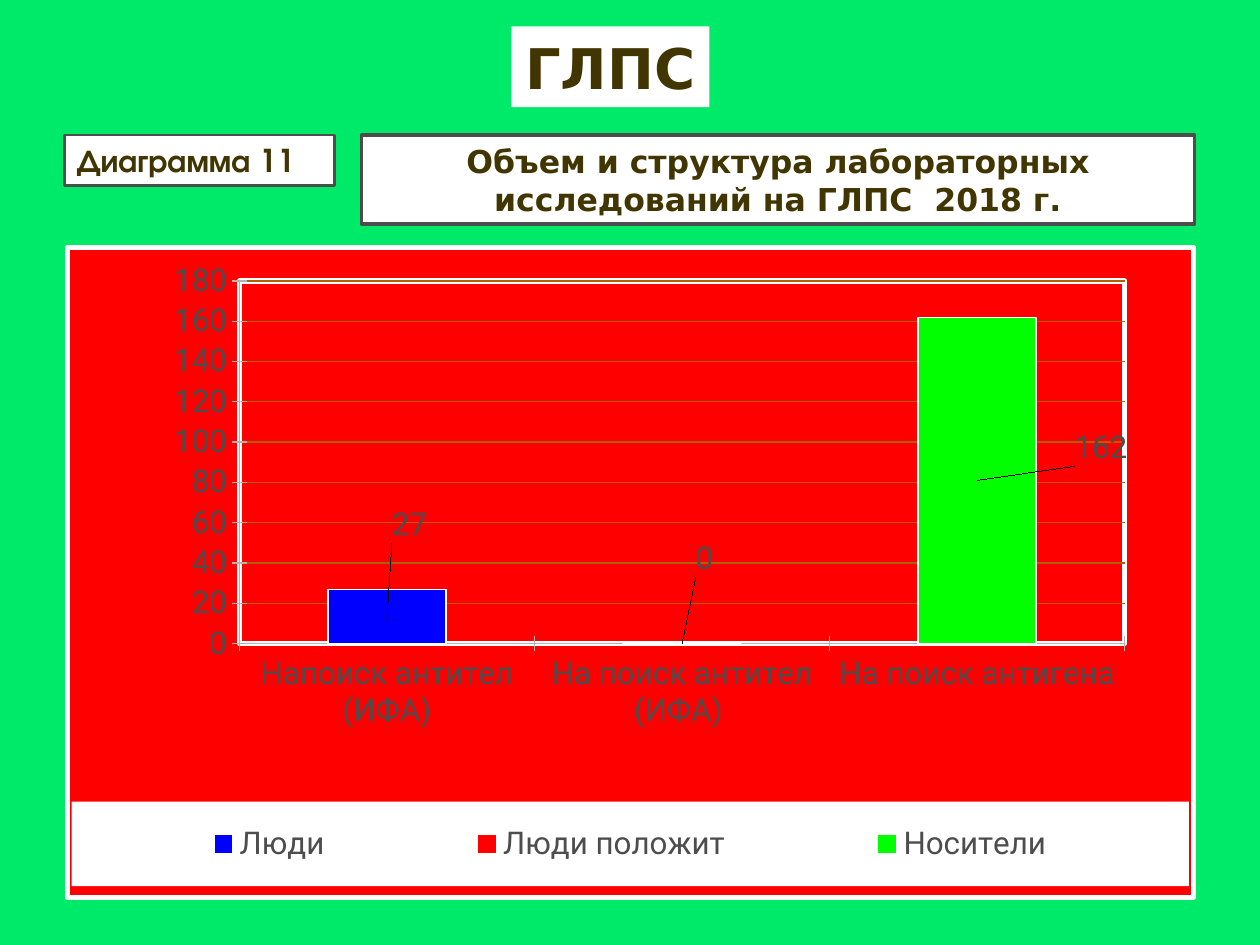
from pptx import Presentation
from pptx.chart.data import CategoryChartData as ChartData
from pptx.dml.color import RGBColor
from pptx.enum.chart import XL_CHART_TYPE as Kind, XL_LEGEND_POSITION as Side
from pptx.enum.chart import XL_TICK_MARK as Tick
from pptx.enum.shapes import MSO_SHAPE as Form
from pptx.enum.text import MSO_ANCHOR as Anchor, PP_ALIGN as Align
from pptx.oxml import parse_xml
from pptx.oxml.ns import nsdecls
from pptx.util import Cm, Pt

GREEN = RGBColor(0x00, 0xEA, 0x6A)
WHITE = RGBColor(0xFF, 0xFF, 0xFF)
BLACK = RGBColor(0x00, 0x00, 0x00)
BROWN = RGBColor(0x41, 0x35, 0x01)
GRAY = RGBColor(0x4D, 0x4D, 0x4D)
SILVER = RGBColor(0xB3, 0xB3, 0xB3)
RED = RGBColor(0xFF, 0x00, 0x00)
BLUE = RGBColor(0x00, 0x00, 0xFF)
LIME = RGBColor(0x01, 0xFF, 0x01)
OCHRE = RGBColor(0xB2, 0x5E, 0x07)


def frame(fill, line, width):
    """Fill and outline for a chart part."""
    inside = f'<a:solidFill><a:srgbClr val="{fill}"/></a:solidFill>' if fill else "<a:noFill/>"
    edge = (f'<a:ln w="{Pt(width)}"><a:solidFill><a:srgbClr val="{line}"/></a:solidFill></a:ln>'
            if line else "<a:ln><a:noFill/></a:ln>")
    return parse_xml(f'<c:spPr {nsdecls("c", "a")}>{inside}{edge}</c:spPr>')


def layout(x, y, w=None, h=None):
    """Manual place: a shift alone, or a full box when a size is given."""
    parts = [("x", x), ("y", y)]
    modes = ""
    if w:
        modes = '<c:xMode val="edge"/><c:yMode val="edge"/>'
        parts += [("w", w), ("h", h)]
    body = "".join(f'<c:{key} val="{val}"/>' for key, val in parts)
    return parse_xml(f'<c:layout {nsdecls("c")}><c:manualLayout>'
                     f'{modes}{body}</c:manualLayout></c:layout>')


class Deck:
    size = Pt(18)
    face = "DejaVu Sans"

    def __init__(self):
        self.prs = Presentation()
        self.prs.slide_width, self.prs.slide_height = Cm(25.4), Cm(19.05)
        self.slide = self.prs.slides.add_slide(self.prs.slide_layouts[5])
        back = self.slide.background.fill
        back.solid()
        back.fore_color.rgb = GREEN

    def label(self, shape, text, size, face, align, wrap=True):
        shape.fill.solid()
        shape.fill.fore_color.rgb = WHITE
        box = shape.text_frame
        box.text = text
        box.word_wrap = wrap
        box.vertical_anchor = Anchor.MIDDLE
        para = box.paragraphs[0]
        para.alignment = align
        font = para.runs[0].font
        font.size, font.name, font.bold = size, face, True
        font.color.rgb = BROWN

    def title(self, text, x, y, w, h):
        shape = self.slide.shapes.title
        shape.left, shape.top, shape.width, shape.height = map(Cm, (x, y, w, h))
        self.label(shape, text, Pt(32), self.face, Align.CENTER, wrap=False)

    def box(self, text, x, y, w, h, edge, face=face, align=Align.CENTER):
        shape = self.slide.shapes.add_shape(Form.RECTANGLE, *map(Cm, (x, y, w, h)))
        shape.shadow.inherit = False
        shape.line.color.rgb = GRAY
        shape.line.width = Pt(edge)
        self.label(shape, text, self.size, face, align)

    def chart(self, cats, rows, x, y, w, h):
        data = ChartData()
        data.categories = cats
        for spot, (name, value, *_) in enumerate(rows):
            data.add_series(name, [value if i == spot else None for i in range(len(cats))])
        chart = self.slide.shapes.add_chart(
            Kind.COLUMN_STACKED, *map(Cm, (x, y, w, h)), data).chart
        chart.has_title = False
        chart.font.size, chart.font.name = self.size, "Roboto"
        chart.font.color.rgb = GRAY
        root = chart._chartSpace
        root.chart.addnext(frame(RED, WHITE, 3))

        # Plot area
        area = root.chart.plotArea
        for old in area.xpath("c:layout"):
            area.remove(old)
        inner = layout(0.153, 0.052, 0.786, 0.558)
        inner[0].insert(0, parse_xml(f'<c:layoutTarget {nsdecls("c")} val="inner"/>'))
        area.insert(0, inner)
        area.append(frame(None, WHITE, 3))

        # Axes
        for axis in (chart.category_axis, chart.value_axis):
            axis.major_tick_mark = Tick.CROSS
            axis.format.line.color.rgb = SILVER
        axis = chart.value_axis
        axis.minimum_scale, axis.maximum_scale, axis.major_unit = 0, 180, 20
        grid = axis.major_gridlines.format.line
        grid.color.rgb, grid.width = OCHRE, Pt(0.75)

        # Columns and their labels
        plot = chart.plots[0]
        plot.gap_width, plot.overlap, plot.vary_by_categories = 150, 100, False
        for spot, (ser, row) in enumerate(zip(plot.series, rows)):
            _, _, color, edge, shift = row
            ser.format.fill.solid()
            ser.format.fill.fore_color.rgb = color
            ser.format.line.color.rgb = WHITE
            ser.format.line.width = Pt(0.75)
            ser.invert_if_negative = False
            font = ser.points[spot].data_label.font
            font.size, font.name = self.size, "Roboto"
            font.color.rgb = GRAY
            tag = ser._element.xpath("c:dLbls/c:dLbl")[0]
            tag.insert(1, layout(*shift))
            tag.insert(2, frame(WHITE, edge, 1.5))

        # Legend
        chart.has_legend = True
        key = chart.legend
        key.position, key.include_in_layout = Side.BOTTOM, True
        key.font.size, key.font.name = self.size, "Roboto"
        key.font.color.rgb = GRAY
        node = key._element
        for old in node.xpath("c:layout"):
            node.remove(old)
        node.xpath("c:legendPos")[0].addnext(layout(0.004, 0.853, 0.992, 0.13))
        node.xpath("c:overlay")[0].addnext(frame(WHITE, None, 0))


def main():
    deck = Deck()
    deck.title("ГЛПС", 10.31, 0.53, 3.99, 1.63)
    deck.box("Диаграмма 11", 1.3, 2.72, 5.44, 1.02, 1.5,
             face="TeX Gyre Adventor", align=Align.LEFT)
    deck.box("Объем и структура лабораторных исследований на ГЛПС  2018 г.",
             7.29, 2.72, 16.79, 1.8, 2)
    cats = ["Напоиск антител (ИФА)", "На поиск антител (ИФА) ", "На поиск антигена"]
    # Name, value, colour, label edge, label shift
    rows = [
        ("Люди", 27, BLUE, BLACK, (0.02, -0.14)),
        ("Люди положит", 0, RED, GRAY, (0.02, -0.13)),
        ("Носители", 162, LIME, BLACK, (0.11, -0.05)),
    ]
    deck.chart(cats, rows, 1.3, 4.93, 22.81, 13.21)
    deck.prs.save("out.pptx")


if __name__ == "__main__":
    main()
